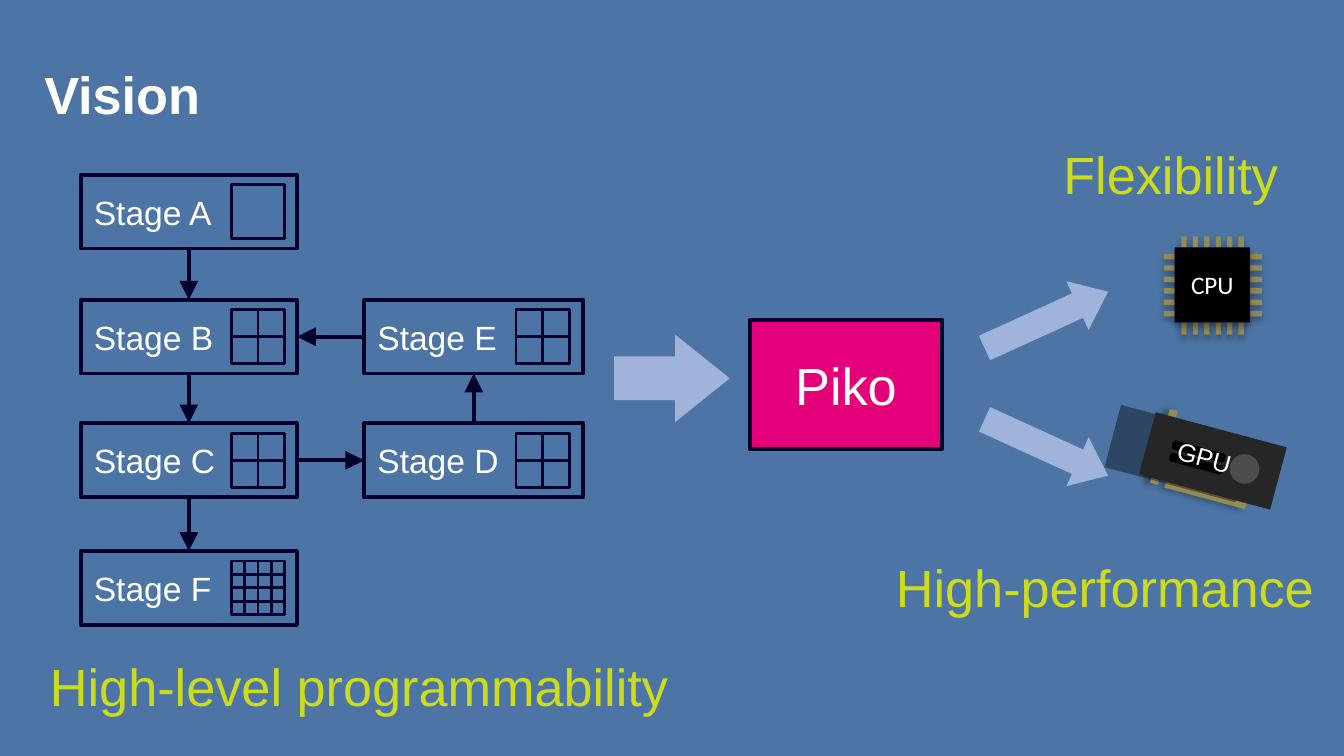
import pptx
import pptx.util
import pptx.dml.color
import pptx.enum.shapes
import pptx.enum.text
import pptx.oxml
import pptx.oxml.ns

Inches = pptx.util.Inches
Pt = pptx.util.Pt
SHAPE = pptx.enum.shapes.MSO_SHAPE
ALIGN = pptx.enum.text.PP_ALIGN
ANCHOR = pptx.enum.text.MSO_ANCHOR

COLORS = {
    "background": "4C75A5",
    "outline": "00002C",
    "text": "FFFFFF",
    "accent": "CDDB1C",
    "arrow": "A0B3D8",
    "piko": "E30078",
    "pin": "948A54",
    "chip": "000000",
    "card": "262626",
    "fan": "4D4D4D",
}

# Stage name: (column, top, cells per side of its grid)
STAGES = {
    "A": (0, 1.3, 1),
    "B": (0, 2.23, 2),
    "C": (0, 3.15, 2),
    "D": (1, 3.15, 2),
    "E": (1, 2.23, 2),
    "F": (0, 4.1, 4),
}
# Left, width and grid left of each column of stages
COLUMNS = [(0.6, 1.61, 1.72), (2.71, 1.63, 3.84)]
STAGE_HEIGHT = 0.55
GRID_SIZE = 0.4
# From stage and side, to stage and side (0 top, 1 left, 2 bottom, 3 right)
FLOWS = [("A", 2, "B", 0), ("B", 2, "C", 0), ("C", 2, "F", 0),
         ("C", 3, "D", 1), ("D", 0, "E", 2), ("E", 1, "B", 3)]

CHIP_SHADOW = (32, 3.5, 2.2, 90)
BRACKET_SHADOW = (40, 4, 3, 180)
CARD_SHADOW = (40, 0, 19, 192)


def rgb(name):
    return pptx.dml.color.RGBColor.from_string(COLORS[name])


def write(frame, text, size, color="text", font="Arial", align=ALIGN.LEFT, bold=False):
    para = frame.paragraphs[0]
    para.alignment = align
    span = para.add_run()
    span.text = text
    span.font.size = Pt(size)
    span.font.name = font
    span.font.bold = bold
    span.font.color.rgb = rgb(color)


def add_effects(properties, shadow):
    """Shadow: opacity in percent, blur and distance in points, angle."""
    opacity, blur, distance, angle = shadow
    properties.append(pptx.oxml.parse_xml(
        f'<a:effectLst {pptx.oxml.ns.nsdecls("a")}>'
        f'<a:outerShdw blurRad="{Pt(blur)}" dist="{Pt(distance)}" '
        f'dir="{angle * 60000}" algn="ctr" rotWithShape="0">'
        f'<a:srgbClr val="000000"><a:alpha val="{opacity * 1000}"/></a:srgbClr>'
        '</a:outerShdw></a:effectLst>'))


def add_box(shapes, place, fill, line=None, width=2, kind=SHAPE.RECTANGLE,
            rotation=0, shadow=None):
    box = shapes.add_shape(kind, *map(Inches, place))
    box.rotation = rotation
    box.fill.solid()
    box.fill.fore_color.rgb = rgb(fill)
    if line:
        box.line.color.rgb = rgb(line)
        box.line.width = Pt(width)
    else:
        box.line.fill.background()
    if shadow:
        add_effects(box._element.spPr, shadow)
    else:
        box.shadow.inherit = False
    box.text_frame.vertical_anchor = ANCHOR.MIDDLE
    return box


def add_label(shapes, place, text, size=28, color="accent", align=ALIGN.CENTER,
              wrap=True, rotation=0):
    box = shapes.add_textbox(*map(Inches, place))
    box.rotation = rotation
    box.text_frame.word_wrap = wrap
    write(box.text_frame, text, size, color, align=align)


def add_block_arrow(shapes, place, rotation=0):
    arrow = add_box(shapes, place, "arrow", kind=SHAPE.RIGHT_ARROW, rotation=rotation)
    arrow.adjustments[0] = 0.5
    arrow.adjustments[1] = 0.624


def add_stage(shapes, name):
    column, top, count = STAGES[name]
    left, width, grid_left = COLUMNS[column]
    box = add_box(shapes, (left, top, width, STAGE_HEIGHT), "background", "outline")
    write(box.text_frame, f"Stage {name}", 18)
    cell = GRID_SIZE / count
    grid_top = top + (STAGE_HEIGHT - GRID_SIZE) / 2
    grid = shapes.add_group_shape().shapes
    for row in range(count):
        for step in range(count):
            add_box(grid, (grid_left + step * cell, grid_top + row * cell, cell, cell),
                    "background", "outline", 1.5)
    return box


def add_flow(shapes, source, source_side, target, target_side):
    flow = shapes.add_connector(pptx.enum.shapes.MSO_CONNECTOR.STRAIGHT, 0, 0, 0, 0)
    flow.begin_connect(source, source_side)
    flow.end_connect(target, target_side)
    flow.line.color.rgb = rgb("outline")
    flow.line.width = Pt(2)
    namespace = pptx.oxml.ns.nsdecls("a")
    flow.line._get_or_add_ln().append(pptx.oxml.parse_xml(
        f'<a:tailEnd {namespace} type="triangle" w="lg" len="lg"/>'))
    flow._element.spPr.append(pptx.oxml.parse_xml(f'<a:effectLst {namespace}/>'))


def add_cpu(shapes):
    chip = shapes.add_group_shape().shapes
    for index in range(6):
        shift = index * 0.085
        add_box(chip, (8.79 + shift, 1.76, 0.04, 0.73), "pin", shadow=CHIP_SHADOW)
        add_box(chip, (8.66, 1.89 + shift, 0.73, 0.04), "pin", shadow=CHIP_SHADOW)
    core = add_box(chip, (8.74, 1.84, 0.56, 0.56), "chip", shadow=CHIP_SHADOW)
    core.text_frame.margin_left = core.text_frame.margin_right = 0
    write(core.text_frame, "CPU", 13.5, font="Calibri", align=ALIGN.CENTER)


def add_gpu(shapes):
    card = shapes.add_group_shape().shapes
    tilt = 15
    # Contacts, bracket and board
    add_box(card, (8.66, 3.66, 0.62, 0.05), "pin", rotation=tilt, shadow=BRACKET_SHADOW)
    add_box(card, (8.63, 3.04, 0.06, 0.57), "pin", rotation=tilt, shadow=BRACKET_SHADOW)
    add_box(card, (8.52, 3.19, 1.01, 0.48), "card", rotation=tilt, shadow=CARD_SHADOW)
    # Fan and vents
    add_box(card, (9.15, 3.38, 0.22, 0.22), "fan", kind=SHAPE.OVAL, rotation=tilt)
    for left, top in ((8.73, 3.34), (8.71, 3.43)):
        add_box(card, (left, top, 0.38, 0.04), "chip", "chip", rotation=tilt)
    add_label(card, (8.66, 3.24, 0.61, 0.33), "GPU", 13.5, "text", ALIGN.LEFT, False, tilt)


def main():
    deck = pptx.Presentation()
    # Widescreen, 16:9
    deck.slide_width = Inches(10)
    deck.slide_height = Inches(10 * 9 / 16)
    page = deck.slides.add_slide(deck.slide_layouts[5])
    page.background.fill.solid()
    page.background.fill.fore_color.rgb = rgb("background")
    shapes = page.shapes

    # Title
    title = shapes.title
    title.left, title.top, title.width, title.height = map(Inches, (0.23, 0.23, 9.57, 0.94))
    title.text_frame.vertical_anchor = ANCHOR.MIDDLE
    write(title.text_frame, "Vision", 28, bold=True)

    # Pipeline of stages
    stages = {name: add_stage(shapes, name) for name in STAGES}
    for source, source_side, target, target_side in FLOWS:
        add_flow(shapes, stages[source], source_side, stages[target], target_side)

    # Compiler and its targets
    add_block_arrow(shapes, (4.57, 2.49, 0.86, 0.65))
    piko = add_box(shapes, (5.58, 2.38, 1.43, 0.96), "piko", "outline")
    write(piko.text_frame, "Piko", 28, align=ALIGN.CENTER)
    add_block_arrow(shapes, (7.28, 2.18, 1.01, 0.4), -24.5)
    add_block_arrow(shapes, (7.28, 3.13, 1.01, 0.4), 24.5)
    add_cpu(shapes)
    add_gpu(shapes)

    # Goals
    add_label(shapes, (0.23, 4.82, 4.88, 0.57), "High-level programmability")
    add_label(shapes, (6.44, 4.08, 3.56, 0.57), "High-performance")
    add_label(shapes, (7.42, 1.01, 2.58, 0.57), "Flexibility")

    deck.save("out.pptx")


if __name__ == "__main__":
    main()
